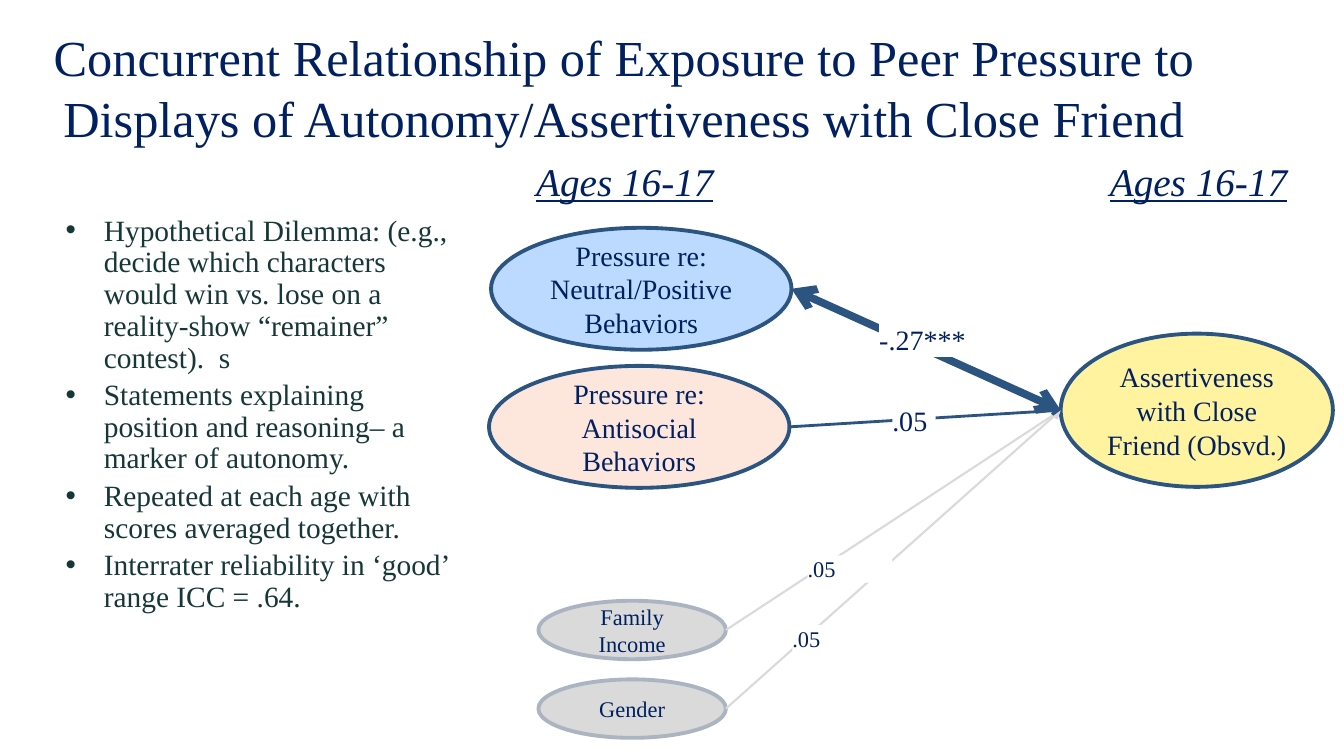
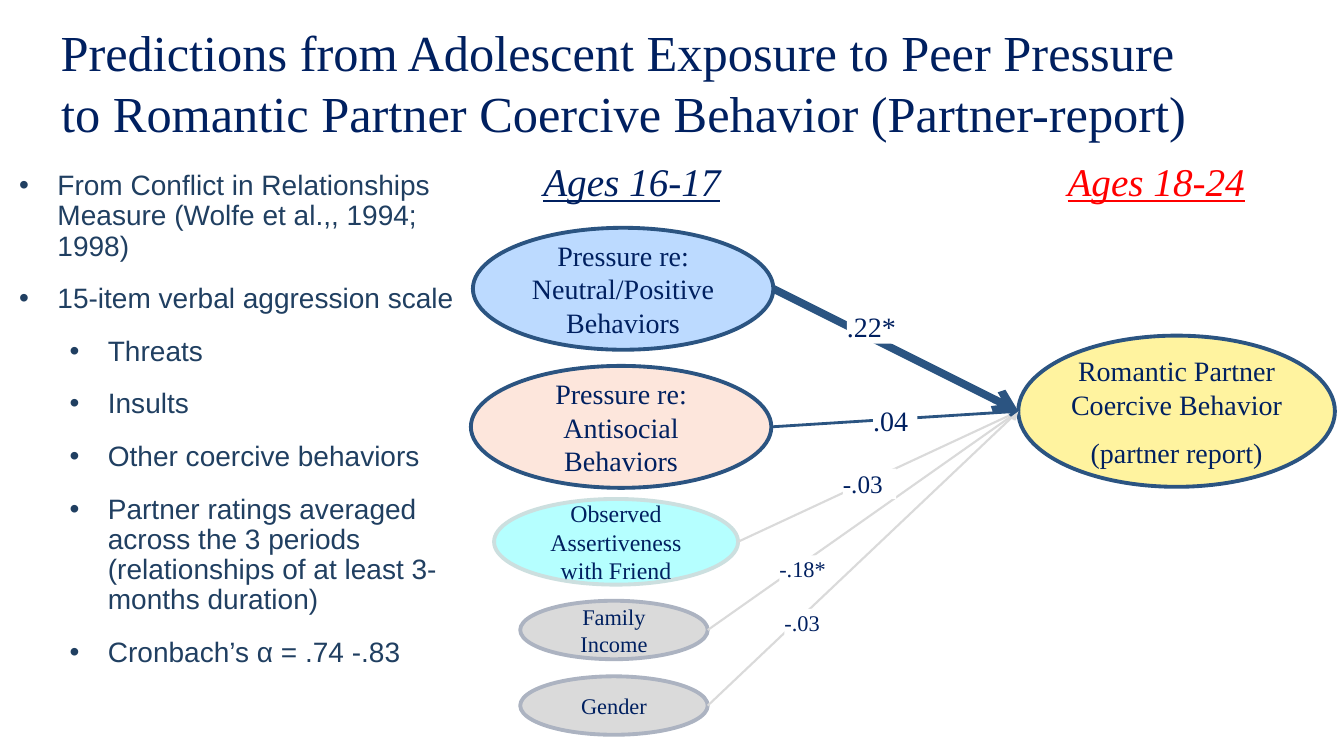
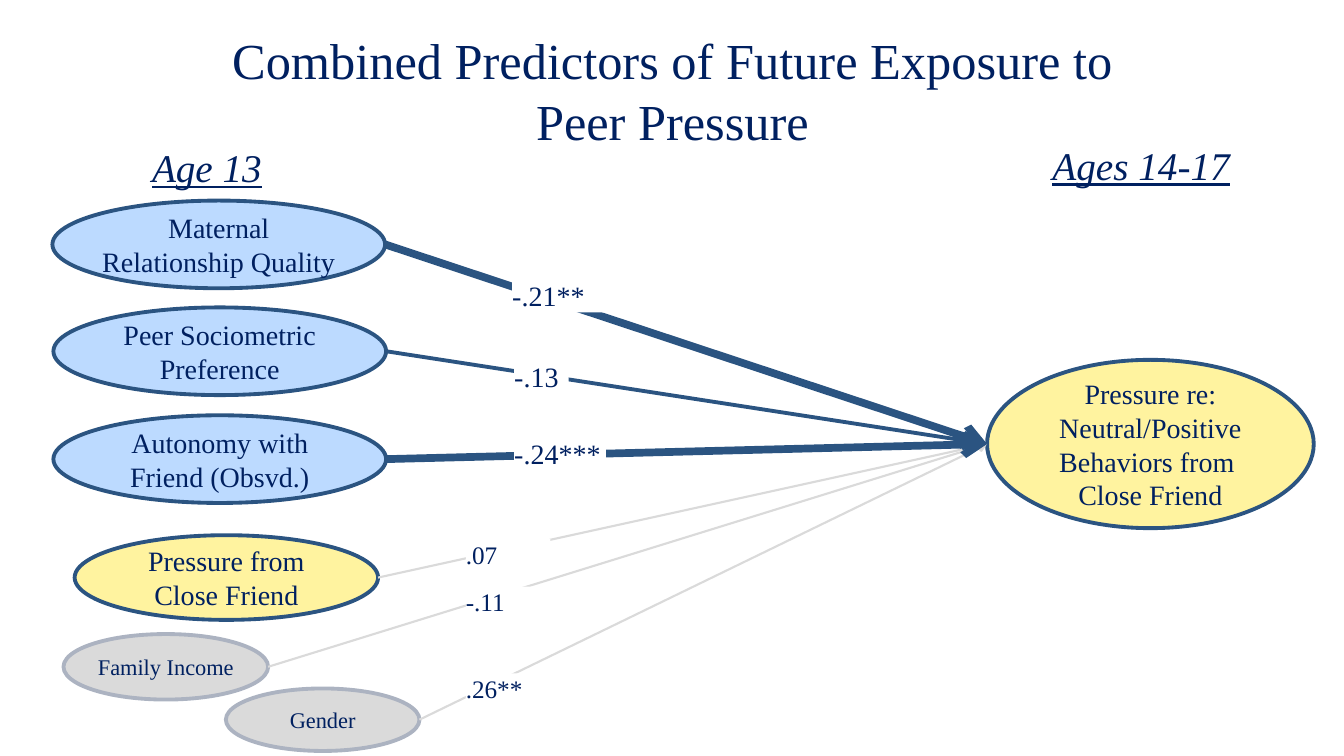
from dataclasses import dataclass

import pptx
import pptx.dml.color
import pptx.enum.shapes
import pptx.enum.text
import pptx.oxml.ns
import pptx.util
from lxml import etree

EMU_PER_PX = 9144
SERIF = "Times New Roman"
SANS = "Arial"
COLORS = {
    "navy": "002060",
    "steel": "2B5481",
    "blue": "BCDAFF",
    "peach": "FDE6DC",
    "yellow": "FFF39F",
    "aqua": "B5FFFF",
    "mist": "CCDFDF",
    "grey": "DADADA",
    "slate": "ACB3C1",
    "red": "FF0000",
    "white": "FFFFFF",
    "pine": "173737",
    "denim": "203F61",
}
LABEL_HEIGHTS = {16: 27, 18: 30, 20: 34}
ALIGN = pptx.enum.text.PP_ALIGN
ANCHOR = pptx.enum.text.MSO_ANCHOR
SHAPE = pptx.enum.shapes.MSO_SHAPE
Box = tuple[int, int, int, int]


@dataclass(frozen=True)
class Style:
    fill: str
    line: str = "steel"
    size: int = 20


POSITIVE = Style("blue")
ANTISOCIAL = Style("peach")
FRIEND = Style("yellow")
ASSERTIVE = Style("aqua", "mist", 17)
CONTROL = Style("grey", "slate", 16)


@dataclass(frozen=True)
class Label:
    text: str
    x: int
    y: int
    w: int
    size: int = 20


@dataclass(frozen=True)
class Predictor:
    text: str
    box: Box
    style: Style
    label: Label
    weight: float = 1.5
    color: str = "grey"
    two_way: bool = False


@dataclass(frozen=True)
class Outcome:
    paragraphs: tuple[str, ...]
    box: Box
    gap: int = 0


@dataclass(frozen=True)
class Heading:
    text: str
    box: Box
    color: str = "navy"


@dataclass(frozen=True)
class Bullets:
    box: Box
    items: tuple[tuple[int, str], ...]
    font: str
    size: int
    color: str
    after: int = 0


@dataclass(frozen=True)
class PathSlide:
    title: tuple[str, ...]
    title_box: Box
    headings: tuple[Heading, ...]
    outcome: Outcome
    predictors: tuple[Predictor, ...]
    bullets: Bullets | None = None


SLIDES = (
    PathSlide(
        title=("Concurrent Relationship of Exposure to Peer Pressure to "
               "Displays of Autonomy/Assertiveness with Close Friend",),
        title_box=(19, 21, 1200, 150),
        headings=(Heading("Ages 16-17", (522, 151, 198, 57)),
                  Heading("Ages 16-17", (1091, 151, 198, 57))),
        outcome=Outcome(("Assertiveness with Close Friend (Obsvd.)",), (1052, 331, 270, 152)),
        predictors=(
            Predictor("Gender", (534, 674, 186, 58), CONTROL, Label(".05", 786, 620, 84, 16)),
            Predictor("Family Income", (534, 596, 186, 58), CONTROL,
                      Label(".05", 801, 551, 84, 16)),
            Predictor("Pressure re: Neutral/Positive Behaviors", (487, 226, 298, 121), POSITIVE,
                      Label("-.27***", 872, 320, 90), 5.5, "steel", True),
            Predictor("Pressure re: Antisocial Behaviors", (485, 363, 298, 121), ANTISOCIAL,
                      Label(".05", 885, 400, 43), 2, "steel"),
        ),
        bullets=Bullets(
            (55, 209, 405, 500),
            ((0, "Hypothetical Dilemma: (e.g., decide which characters would win vs. lose "
                 "on a reality-show “remainer” contest).  s"),
             (0, "Statements explaining position and reasoning– a marker of autonomy."),
             (0, "Repeated at each age with scores averaged together."),
             (0, "Interrater reliability in ‘good’ range ICC = .64.")),
            SERIF, 21, "pine"),
    ),
    PathSlide(
        title=("Predictions from Adolescent Exposure to Peer Pressure ",
               "to Romantic Partner Coercive Behavior (Partner-report)"),
        title_box=(19, 16, 1200, 150),
        headings=(Heading("Ages 16-17", (529, 151, 198, 57)),
                  Heading("Ages 18-24", (1049, 151, 198, 57), "red")),
        outcome=Outcome(("Romantic Partner Coercive Behavior", "(partner report)"),
                        (1010, 333, 314, 150), 10),
        predictors=(
            Predictor("Observed Assertiveness with Friend", (490, 495, 242, 85), ASSERTIVE,
                      Label("-.03", 836, 465, 53, 18)),
            Predictor("Gender", (516, 671, 186, 58), CONTROL, Label("-.03", 778, 604, 84, 16)),
            Predictor("Family Income", (516, 596, 186, 58), CONTROL,
                      Label("-.18*", 773, 551, 54, 16)),
            Predictor("Pressure re: Neutral/Positive Behaviors", (469, 226, 298, 121), POSITIVE,
                      Label(".22*", 840, 307, 54), 5.5, "steel"),
            Predictor("Pressure re: Antisocial Behaviors", (467, 363, 298, 121), ANTISOCIAL,
                      Label(".04", 866, 400, 44), 2, "steel"),
        ),
        bullets=Bullets(
            (9, 165, 467, 538),
            ((0, "From Conflict in Relationships Measure (Wolfe et al.,, 1994; 1998)"),
             (0, "15-item verbal aggression scale"),
             (1, "Threats"),
             (1, "Insults"),
             (1, "Other coercive behaviors"),
             (1, "Partner ratings averaged across the 3 periods "
                 "(relationships of at least 3-months duration)"),
             (1, "Cronbach’s α = .74 -.83")),
            SANS, 20, "denim", 12),
    ),
    PathSlide(
        title=("Combined Predictors of Future Exposure to Peer Pressure",),
        title_box=(217, 24, 900, 150),
        headings=(Heading("Age 13", (141, 137, 130, 57)),
                  Heading("Ages 14-17", (1034, 135, 198, 57))),
        outcome=Outcome(("Pressure re: Neutral/Positive Behaviors from ", "Close Friend"),
                        (979, 357, 324, 167)),
        predictors=(
            Predictor("Pressure from Close Friend", (74, 531, 301, 84), FRIEND,
                      Label(".07", 462, 535, 84, 18)),
            Predictor("Gender", (224, 683, 192, 62), CONTROL, Label(".26**", 462, 668, 84, 18)),
            Predictor("Family Income", (63, 629, 203, 65), CONTROL,
                      Label("-.11", 462, 582, 84, 18)),
            Predictor("Maternal Relationship Quality", (52, 199, 330, 87), POSITIVE,
                      Label("-.21**", 508, 276, 91), 5.5, "steel"),
            Predictor("Peer Sociometric Preference", (53, 305, 330, 87), POSITIVE,
                      Label("-.13", 510, 357, 54), 2.75, "steel"),
            Predictor("Autonomy with Friend (Obsvd.)", (53, 412, 330, 87), POSITIVE,
                      Label("-.24***", 510, 433, 91), 5.5, "steel"),
        ),
    ),
)


def px(n: float) -> int:
    return pptx.util.Emu(round(n * EMU_PER_PX))


def rgb(name: str) -> pptx.dml.color.RGBColor:
    return pptx.dml.color.RGBColor.from_string(COLORS[name])


def add_run(p, text: str, size: int, color: str = "navy", font: str = SERIF):
    r = p.add_run()
    r.text = text
    r.font.name = font
    r.font.size = pptx.util.Pt(size)
    r.font.color.rgb = rgb(color)
    return r


def next_paragraph(tf, index: int):
    return tf.add_paragraph() if index else tf.paragraphs[0]


def place(sp, box: Box) -> None:
    sp.left, sp.top, sp.width, sp.height = map(px, box)


def sub(parent, tag: str, **attrs: str) -> None:
    etree.SubElement(parent, pptx.oxml.ns.qn(tag), attrs)


def draw_title(s, lines: tuple[str, ...], box: Box) -> None:
    sp = s.shapes.title
    place(sp, box)
    tf = sp.text_frame
    tf.auto_size = pptx.enum.text.MSO_AUTO_SIZE.NONE
    tf.vertical_anchor = ANCHOR.TOP
    p = tf.paragraphs[0]
    p.alignment = ALIGN.CENTER
    for i, line in enumerate(lines):
        if i:
            p.add_line_break()
        add_run(p, line, 36)


def draw_bullets(s, bullets: Bullets) -> None:
    sp = s.placeholders[1]
    place(sp, bullets.box)
    tf = sp.text_frame
    tf.auto_size = pptx.enum.text.MSO_AUTO_SIZE.NONE
    for i, (level, text) in enumerate(bullets.items):
        p = next_paragraph(tf, i)
        p.level = level
        p.line_spacing = 0.9
        p.space_before = pptx.util.Pt(4)
        p.space_after = pptx.util.Pt(bullets.after)
        add_run(p, text, bullets.size, bullets.color, bullets.font)
        pPr = p._p.get_or_add_pPr()
        pPr.set("marL", str(px(38 + 50 * level)))
        pPr.set("indent", str(px(-38)))
        sub(pPr, "a:buFont", typeface=SANS)
        sub(pPr, "a:buChar", char="•")


def draw_heading(s, heading: Heading) -> None:
    tf = s.shapes.add_textbox(*map(px, heading.box)).text_frame
    tf.word_wrap = False
    r = add_run(tf.paragraphs[0], heading.text, 28, heading.color)
    r.font.italic = True
    r.font.underline = True


def draw_shape(s, kind, box: Box, style: Style, paragraphs: tuple[str, ...],
               align, anchor, gap: int = 0):
    sp = s.shapes.add_shape(kind, *map(px, box))
    sp.shadow.inherit = False
    sp.fill.solid()
    sp.fill.fore_color.rgb = rgb(style.fill)
    tf = sp.text_frame
    tf.word_wrap = True
    tf.vertical_anchor = anchor
    tf.margin_left = tf.margin_top = tf.margin_right = tf.margin_bottom = 0
    for i, text in enumerate(paragraphs):
        p = next_paragraph(tf, i)
        p.alignment = align
        p.space_before = pptx.util.Pt(gap if i else 0)
        add_run(p, text, style.size)
    return sp


def draw_oval(s, box: Box, style: Style, paragraphs: tuple[str, ...], gap: int = 0) -> None:
    sp = draw_shape(s, SHAPE.OVAL, box, style, paragraphs, ALIGN.CENTER, ANCHOR.MIDDLE, gap)
    sp.line.color.rgb = rgb(style.line)
    sp.line.width = pptx.util.Pt(2.75)


def draw_label(s, label: Label) -> None:
    box = (label.x, label.y, label.w, LABEL_HEIGHTS[label.size])
    style = Style("white", size=label.size)
    sp = draw_shape(s, SHAPE.RECTANGLE, box, style, (label.text,), ALIGN.LEFT, ANCHOR.TOP)
    sp.line.fill.background()


def draw_link(s, predictor: Predictor, target: Box) -> None:
    x, y, w, h = predictor.box
    tx, ty, _, th = target
    ends = (x + w, y + h / 2, tx, ty + th / 2)
    link = s.shapes.add_connector(pptx.enum.shapes.MSO_CONNECTOR.STRAIGHT, *map(px, ends))
    link.line.color.rgb = rgb(predictor.color)
    link.line.width = pptx.util.Pt(predictor.weight)
    ln = link.line._get_or_add_ln()
    if predictor.two_way:
        sub(ln, "a:headEnd", type="arrow")
    sub(ln, "a:tailEnd", type="arrow")
    sub(link._element.spPr, "a:effectLst")


def draw_slide(prs, content: PathSlide) -> None:
    s = prs.slides.add_slide(prs.slide_layouts[1 if content.bullets else 5])
    draw_title(s, content.title, content.title_box)
    if content.bullets:
        draw_bullets(s, content.bullets)
    for heading in content.headings:
        draw_heading(s, heading)
    outcome = content.outcome
    draw_oval(s, outcome.box, FRIEND, outcome.paragraphs, outcome.gap)
    for predictor in content.predictors:
        draw_oval(s, predictor.box, predictor.style, (predictor.text,))
    for predictor in content.predictors:
        draw_link(s, predictor, outcome.box)
    for predictor in content.predictors:
        draw_label(s, predictor.label)


def main() -> None:
    prs = pptx.Presentation()
    prs.slide_width = px(1333)
    prs.slide_height = px(750)
    for content in SLIDES:
        draw_slide(prs, content)
    prs.save("out.pptx")


if __name__ == "__main__":
    main()
